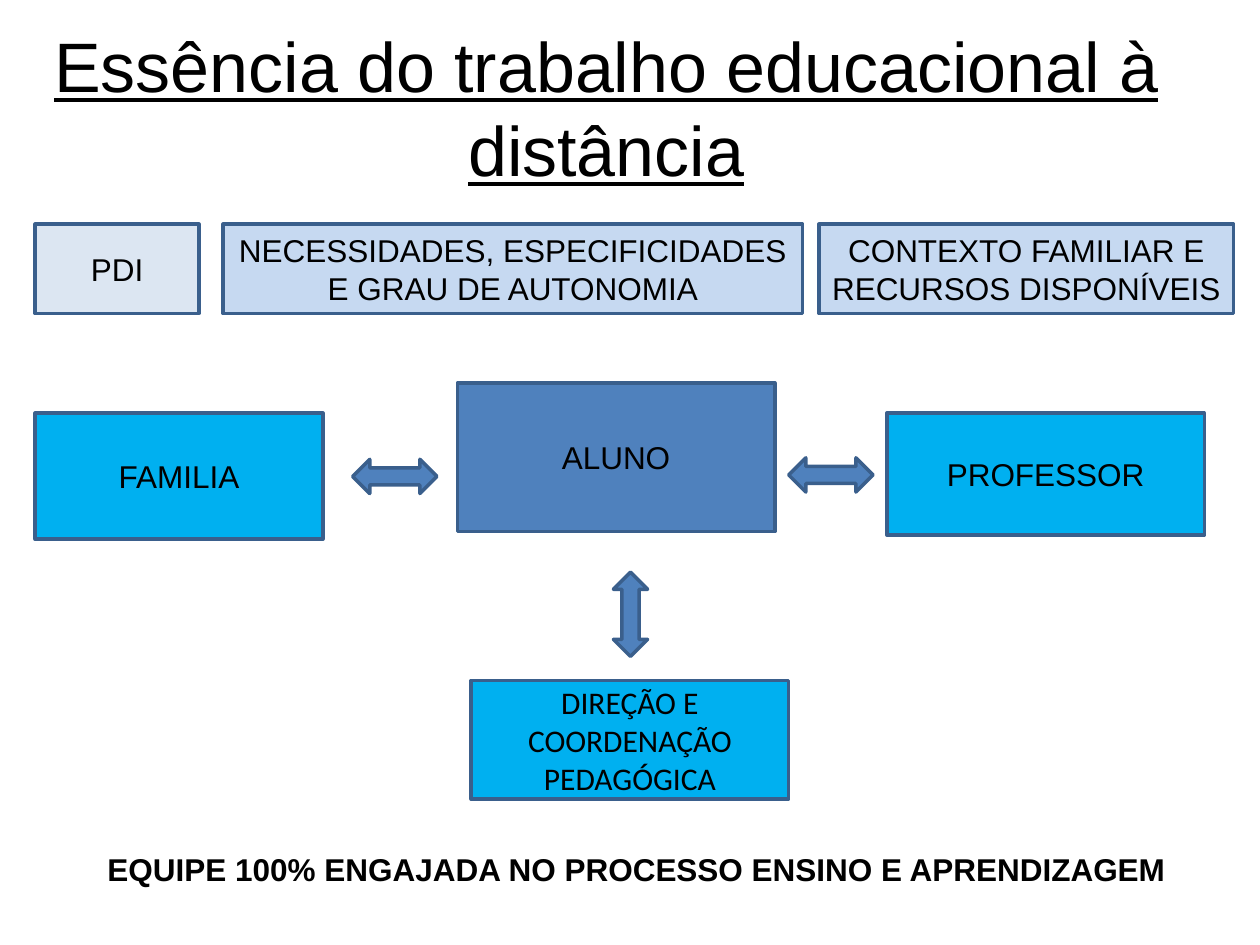
from dataclasses import dataclass

from pptx import Presentation
from pptx.dml.color import RGBColor
from pptx.enum.shapes import MSO_SHAPE
from pptx.enum.text import MSO_ANCHOR, PP_ALIGN
from pptx.slide import Slide
from pptx.text.text import TextFrame
from pptx.util import Cm, Pt

RECT = MSO_SHAPE.RECTANGLE
ARROW = MSO_SHAPE.LEFT_RIGHT_ARROW
MIDDLE = MSO_ANCHOR.MIDDLE
CENTER = PP_ALIGN.CENTER

BLACK, EDGE, BLUE = "000000", "3A5F8C", "4F81BD"
CYAN, PALE, MIST = "00B0F0", "C6D9F1", "DCE6F2"


@dataclass
class Box:
    """A labelled or plain shape, with lengths in centimetres."""
    left: float
    top: float
    width: float
    height: float
    fill: str = BLUE
    text: str = ""
    font: str = "Arial"
    kind: MSO_SHAPE = RECT
    turn: float = 0


@dataclass
class Label:
    """A text line without a frame, with lengths in centimetres."""
    left: float
    top: float
    width: float
    height: float
    text: str
    size: int = 18
    bold: bool = False
    under: bool = False


def paint(color: str) -> RGBColor:
    """Turn a hex string into a colour."""
    return RGBColor.from_string(color)


def write(frame: TextFrame, text: str, size: int = 18, name: str = "Arial",
          bold: bool = False, under: bool = False) -> None:
    """Put one centred, wrapped paragraph in a frame."""
    frame.word_wrap = True
    frame.text = text
    para = frame.paragraphs[0]
    para.alignment = CENTER
    font = para.font
    font.name, font.size = name, Pt(size)
    font.bold, font.underline = bold, under
    font.color.rgb = paint(BLACK)


def draw_box(slide: Slide, box: Box) -> None:
    """Draw a filled shape and its text."""
    shape = slide.shapes.add_shape(
        box.kind, Cm(box.left), Cm(box.top), Cm(box.width), Cm(box.height))
    shape.shadow.inherit = False
    shape.rotation = box.turn
    shape.fill.solid()
    shape.fill.fore_color.rgb = paint(box.fill)
    shape.line.color.rgb = paint(EDGE)
    shape.line.width = Pt(2)
    if box.text:
        frame = shape.text_frame
        frame.vertical_anchor = MIDDLE
        frame.margin_left = frame.margin_right = Cm(0.2)
        write(frame, box.text, name=box.font)


def draw_label(slide: Slide, label: Label) -> None:
    """Draw a text box."""
    shape = slide.shapes.add_textbox(
        Cm(label.left), Cm(label.top), Cm(label.width), Cm(label.height))
    write(shape.text_frame, label.text, label.size,
          bold=label.bold, under=label.under)


def arrow(left: float, top: float, turn: float = 0) -> Box:
    """Describe a double arrow."""
    return Box(left, top, 1.7, 0.69, kind=ARROW, turn=turn)


def need(left: float, width: float, fill: str, text: str) -> Box:
    """Describe a box of the top row."""
    return Box(left, 4.52, width, 1.8, fill, text)


BOXES = [
    Box(9.22, 7.72, 6.4, 3, BLUE, "ALUNO"),
    Box(17.88, 8.33, 6.4, 2.46, CYAN, "PROFESSOR"),
    Box(0.71, 8.33, 5.8, 2.54, CYAN, "FAMILIA"),
    Box(9.5, 13.72, 6.4, 2.39, CYAN,
        "DIREÇÃO E COORDENAÇÃO PEDAGÓGICA", "Calibri"),
    arrow(7.11, 9.26),
    arrow(11.86, 12.04, 90),
    arrow(15.9, 9.23),
    need(16.51, 8.36, PALE, "CONTEXTO FAMILIAR E RECURSOS DISPONÍVEIS"),
    need(4.5, 11.68, PALE,
         "NECESSIDADES, ESPECIFICIDADES E GRAU DE AUTONOMIA"),
    need(0.71, 3.3, MIST, "PDI"),
]
LABELS = [
    Label(0.5, 0.33, 23.44, 3.68,
          "Essência do trabalho educacional à distância", 40, under=True),
    Label(0.81, 17.02, 24.05, 1.02,
          "EQUIPE 100% ENGAJADA NO PROCESSO ENSINO E APRENDIZAGEM",
          bold=True),
]


def main() -> None:
    """Build and save the slide."""
    deck = Presentation()
    deck.slide_width, deck.slide_height = Cm(25.4), Cm(19.05)
    slide = deck.slides.add_slide(deck.slide_layouts[6])
    for box in BOXES:
        draw_box(slide, box)
    for label in LABELS:
        draw_label(slide, label)
    deck.save("out.pptx")


if __name__ == "__main__":
    main()
